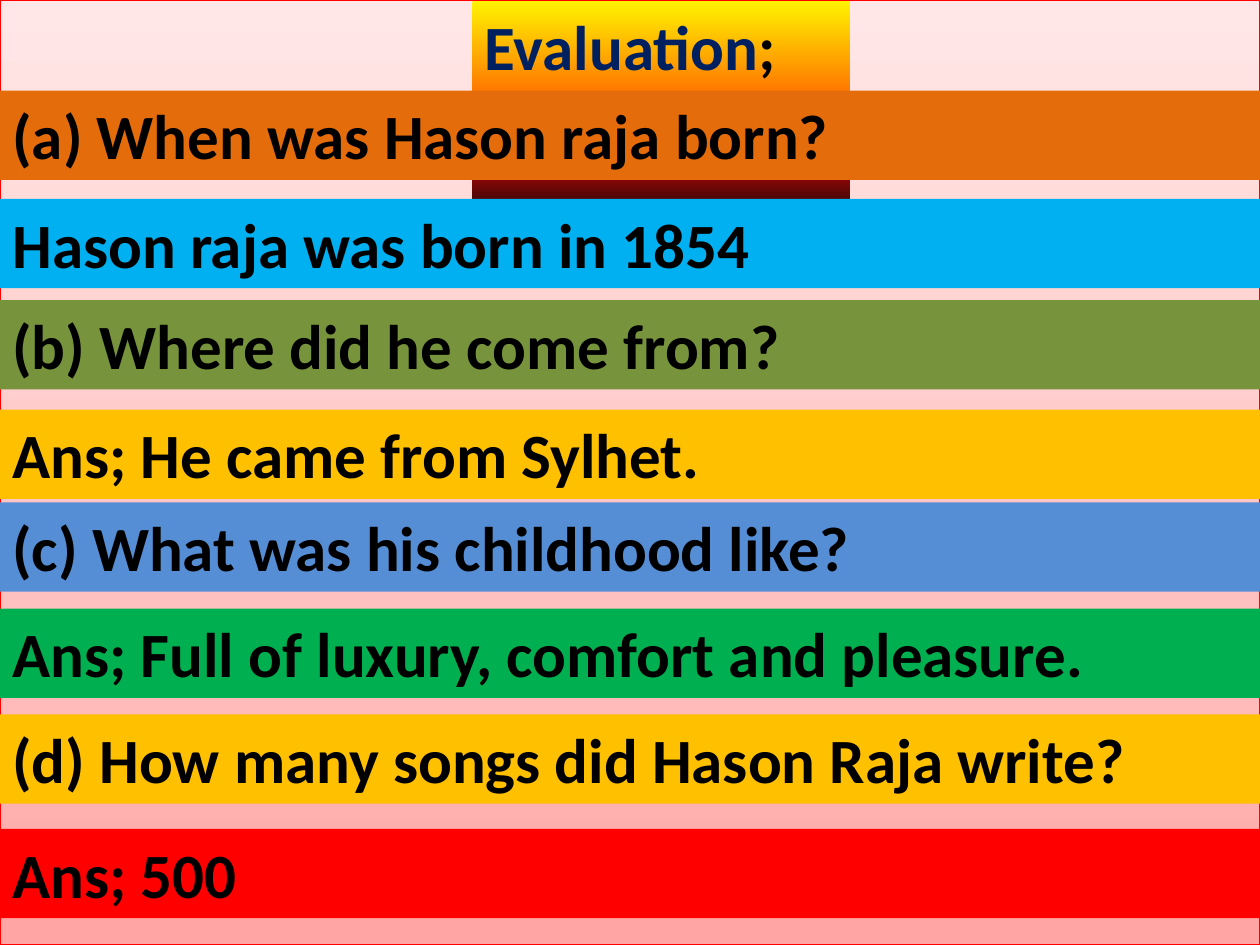
from lxml.etree import SubElement
from pptx import Presentation
from pptx.dml.color import RGBColor
from pptx.enum.shapes import MSO_SHAPE
from pptx.enum.text import MSO_ANCHOR, MSO_AUTO_SIZE, PP_ALIGN
from pptx.oxml.ns import qn
from pptx.util import Cm, Pt

COLORS = {
    "black": "000000", "navy": "002060", "red": "FF0000",
    "orange": "E46C0A", "sky": "00B0F0", "olive": "77933C",
    "amber": "FFC000", "blue": "558ED5", "green": "00B050",
}
PINK_STOPS = [(0, "FFA6A5"), (35, "FFC0BF"), (100, "FFE7E7")]
FIRE_STOPS = [(0, "FFF200"), (45, "FF7A00"), (70, "FF0300"), (100, "4D0808")]
BAR_HEIGHT = Cm(1.8)


def fill_gradient(shape, stops, angle):
    shape.fill.gradient()
    shape.fill.gradient_angle = angle
    stop_list = shape._element.spPr.find(qn("a:gradFill")).find(qn("a:gsLst"))
    for old_stop in list(stop_list):
        stop_list.remove(old_stop)
    for position, color in stops:
        stop = SubElement(stop_list, qn("a:gs"), pos=str(position * 1000))
        SubElement(stop, qn("a:srgbClr"), val=color)


def format_text(frame, colors):
    frame.word_wrap = True
    frame.auto_size = MSO_AUTO_SIZE.SHAPE_TO_FIT_TEXT
    frame.vertical_anchor = MSO_ANCHOR.TOP
    paragraph = frame.paragraphs[0]
    paragraph.alignment = PP_ALIGN.LEFT
    for run, color in zip(paragraph.runs, colors):
        run.font.name = "Calibri"
        run.font.size = Pt(36)
        run.font.bold = True
        run.font.color.rgb = RGBColor.from_string(COLORS[color])


prs = Presentation()
prs.slide_width, prs.slide_height = Cm(25.4), Cm(19.05)
slide = prs.slides.add_slide(prs.slide_layouts[5])

backdrop = slide.shapes.add_shape(
    MSO_SHAPE.RECTANGLE, 0, 0, prs.slide_width, prs.slide_height)
backdrop.shadow.inherit = False
fill_gradient(backdrop, PINK_STOPS, 90)
backdrop.line.color.rgb = RGBColor.from_string(COLORS["red"])
backdrop.line.width = Pt(0.75)
slide.shapes._spTree.insert(2, backdrop._element)

heading = slide.shapes.title
heading.left, heading.top = Cm(9.52), Cm(0.03)
heading.width, heading.height = Cm(7.62), BAR_HEIGHT
fill_gradient(heading, FIRE_STOPS, 270)
heading_line = heading.text_frame.paragraphs[0]
for part in ("Evaluation", ";"):
    heading_line.add_run().text = part
format_text(heading.text_frame, ["navy", "black"])

questions_and_answers = [
    (1.83, "orange", "(a) When was Hason raja born?"),
    (4.01, "sky", "Hason raja was born in 1854"),
    (6.05, "olive", "(b) Where did he come from?"),
    (8.26, "amber", "Ans; He came from Sylhet."),
    (10.13, "blue", "(c) What was his childhood like?"),
    (12.27, "green", "Ans; Full of luxury, comfort and pleasure."),
    (14.4, "amber", "(d) How many songs did Hason Raja write?"),
    (16.71, "red", "Ans; 500"),
]
for top, color, sentence in questions_and_answers:
    bar = slide.shapes.add_textbox(0, Cm(top), prs.slide_width, BAR_HEIGHT)
    bar.fill.solid()
    bar.fill.fore_color.rgb = RGBColor.from_string(COLORS[color])
    bar.text_frame.text = sentence
    format_text(bar.text_frame, ["black"])

prs.save("out.pptx")
